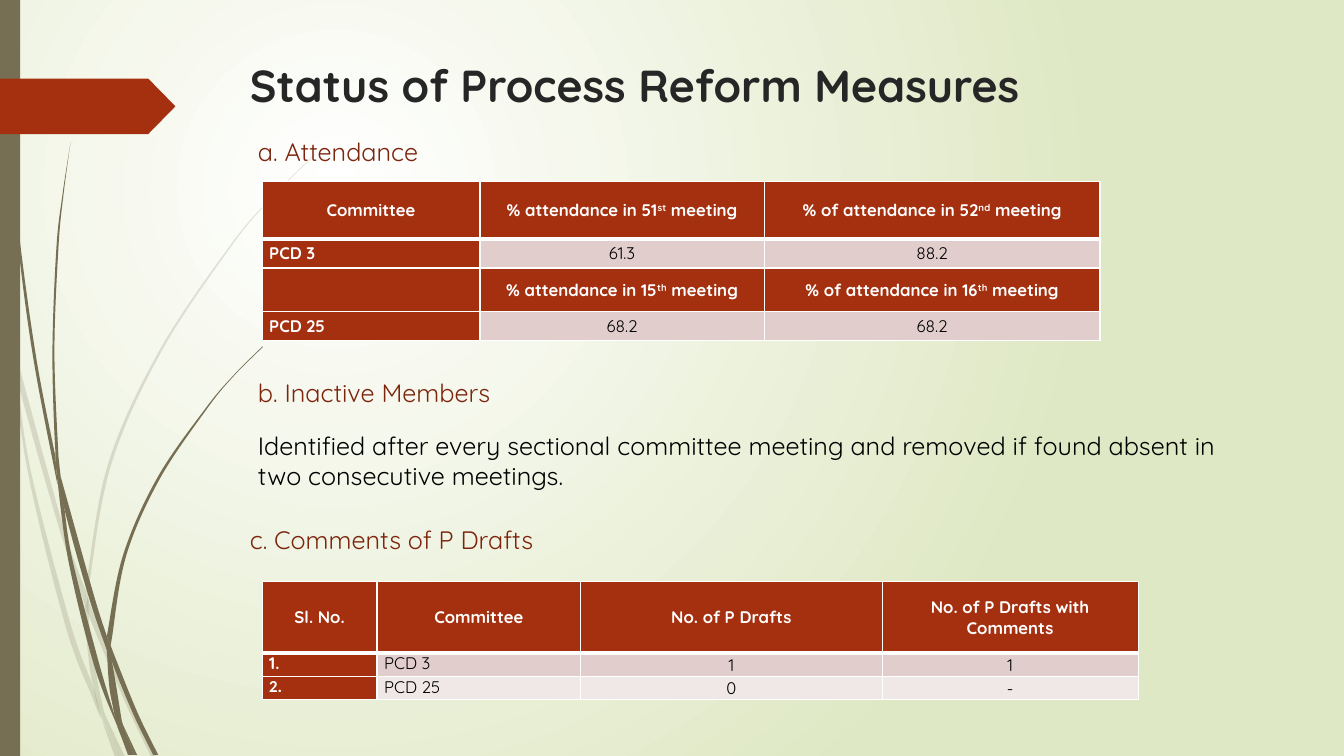
"""Build the slide on the status of process reform measures."""
from dataclasses import dataclass

from lxml import etree
from pptx import Presentation, util as u
from pptx.dml.color import RGBColor
from pptx.enum import shapes, text
from pptx.oxml import ns

SLIDE_W, SLIDE_H = 13.33, 7.5


@dataclass(frozen=True)
class Theme:
    font: str = "Quicksand"
    number_font: str = "Calibri"
    title: str = "262626"
    heading: str = "7C240C"
    ink: str = "000000"
    white: str = "FFFFFF"
    accent: str = "A53010"
    stem: str = "766F54"
    glow_edge: str = "DFE8C4"
    band: str = "E1CDCC"
    pale_band: str = "F0E8E7"
    title_size: int = 32
    body_size: int = 18
    cell_size: int = 12
    rule: int = 1
    header_rule: int = 3


THEME = Theme()

TITLE = ("Status of Process Reform Measures", (2.38, 0.52, 10.49, 1.4))
HEADINGS = [
    ("a. Attendance", (2.46, 1.3, 10.49, 0.4)),
    ("b. Inactive Members", (2.46, 3.69, 10.49, 0.4)),
    ("c. Comments of P Drafts", (2.38, 5.15, 10.49, 0.4)),
]
INACTIVE_RULE = (
    "Identified after every sectional committee meeting and removed "
    "if found absent in two consecutive meetings.", (2.46, 4.22, 10.13, 0.71))

ATTENDANCE = dict(
    left=2.6, top=1.8, cols=[2.16, 2.82, 3.33], rows=[0.57, 0.29, 0.43, 0.29],
    header_rows=(0, 2), label_cols=1, label_anchor=text.MSO_ANCHOR.MIDDLE,
    number_row=None, bands={1: THEME.band, 3: THEME.band},
    cells=[
        ["Committee", "% attendance in 51^st^ meeting", "% of attendance in 52^nd^ meeting"],
        ["PCD 3", "61.3", "88.2"],
        ["", "% attendance in 15^th^ meeting", "% of attendance in 16^th^ meeting"],
        ["PCD 25", "68.2", "68.2"],
    ])
DRAFTS = dict(
    left=2.6, top=5.77, cols=[1.14, 2.02, 2.99, 2.54], rows=[0.71, 0.23, 0.23],
    header_rows=(0,), label_cols=2, label_anchor=text.MSO_ANCHOR.TOP,
    number_row=2, bands={1: THEME.band, 2: THEME.pale_band},
    cells=[
        ["Sl. No.", "Committee", "No. of P Drafts", "No. of P Drafts with Comments"],
        ["1.", "PCD 3", "1", "1"],
        ["2.", "PCD 25", "0", "-"],
    ])

PALE_STEMS = [
    ([(.11, 3.5), (.09, 3.22), (0, 2.82)], [(0, 2.99), (.1, 3.44)]),
    ([(.14, 3.45), (.17, 3.76), (.58, 5.22), (.84, 5.99)], [(.85, 5.86), (.62, 5.2), (.14, 3.45)]),
    ([(.88, 5.96), (.88, 6.1), (1.23, 6.94), (1.5, 7.51)], [(1.55, 7.51), (1.27, 6.92), (.92, 6.07)]),
    ([(1.05, 7.11), (1.19, 7.51)], [(1.24, 7.51), (1.05, 7.11)]),
    ([(.11, 3.5), (.28, 4.7), (.65, 6.21), (.92, 6.93), (1.01, 7.14)],
     [(.99, 7.07), (.93, 6.83), (.7, 6.19), (.31, 4.69), (.17, 3.76)]),
    ([(.84, 5.99), (.87, 6.46), (.93, 6.83), (1.05, 7.11)], [(1.03, 7.06), (.91, 6.46), (.88, 6.1)]),
    ([(3.12, 1.53), (2.68, 1.97), (2.28, 2.44), (1.58, 3.48), (1.07, 4.61), (.85, 5.84)],
     [(.88, 5.96), (.88, 5.84), (1.1, 4.62), (1.6, 3.49), (2.29, 2.45), (2.68, 1.98), (3.12, 1.54)]),
    ([(1.01, 7.14), (1.14, 7.51)], [(1.19, 7.51), (1.01, 7.14)]),
    ([(.85, 5.86), (.84, 5.99), (.88, 6.1)], [(.88, 5.96), (.85, 5.86)]),
    ([(.93, 6.83), (.99, 7.07), (1.19, 7.51)], [(1.05, 7.11), (.96, 6.92)]),
]
DARK_STEMS = [
    ([(.03, 0), (.04, .48), (.07, 1.1), (.17, 2.33), (.33, 3.55), (.57, 4.81)],
     [(.55, 4.53), (.36, 3.55), (.19, 2.32), (.08, 1.09), (.05, .48), (.04, 0)]),
    ([(.6, 4.72), (.64, 5.05), (.88, 5.92), (1.06, 6.45)], [(1.06, 6.31), (.93, 5.9), (.6, 4.72)]),
    ([(1.1, 6.41), (1.11, 6.56), (1.32, 7.08), (1.52, 7.49)], [(1.57, 7.49), (1.36, 7.06), (1.13, 6.49)]),
    ([(.57, 4.77), (.68, 5.57), (.93, 6.59), (1.17, 7.22)],
     [(1.16, 7.17), (.98, 6.57), (.72, 5.56), (.64, 5.05)]),
    ([(.7, 1.41), (.62, 1.93), (.56, 2.45), (.52, 3.49), (.55, 4.49), (.6, 4.72)],
     [(.58, 4.53), (.54, 3.49), (.58, 2.45), (.63, 1.93), (.7, 1.41)]),
    ([(1.22, 7.19), (1.33, 7.49)], [(1.36, 7.49), (1.22, 7.19)]),
    ([(.55, 4.49), (.57, 4.77), (.64, 5.05)], [(.6, 4.72), (.55, 4.49)]),
    ([(2.6, 3.44), (2.31, 3.73), (2.04, 4.05), (1.56, 4.74), (1.22, 5.51), (1.06, 6.31)],
     [(1.1, 6.41), (1.11, 6.33), (1.25, 5.52), (1.58, 4.76), (2.05, 4.06), (2.31, 3.74), (2.61, 3.44)]),
    ([(1.17, 7.22), (1.27, 7.49)], [(1.31, 7.49), (1.17, 7.22)]),
    ([(1.06, 6.45), (1.1, 6.91), (1.22, 7.19)], [(1.21, 7.16), (1.11, 6.56), (1.06, 6.45)]),
    ([(1.06, 6.31), (1.06, 6.45), (1.11, 6.56)], [(1.1, 6.41), (1.06, 6.31)]),
    ([(1.1, 6.91), (1.17, 7.22), (1.3, 7.49)], [(1.33, 7.49), (1.22, 7.19), (1.16, 7.06)]),
]


def inches(box):
    return [u.Inches(length) for length in box]


def write(frame, words, size=THEME.body_size, color=THEME.ink, bold=False,
          font=THEME.font, align=text.PP_ALIGN.LEFT):
    """Write words into a frame; parts between carets are raised."""
    frame.word_wrap = True
    line = frame.paragraphs[0]
    line.alignment = align
    for index, part in enumerate(words.split("^")):
        run = line.add_run()
        run.text = part
        run.font.size, run.font.bold, run.font.name = u.Pt(size), bold, font
        run.font.color.rgb = RGBColor.from_string(color)
        if index % 2:
            run.font._element.set("baseline", "30000")


def paint(shape, color, opacity=100):
    shape.shadow.inherit = False
    shape.line.fill.background()
    shape.fill.solid()
    shape.fill.fore_color.rgb = RGBColor.from_string(color)
    if opacity < 100:
        tint = shape._element.spPr.find(".//" + ns.qn("a:srgbClr"))
        etree.SubElement(tint, ns.qn("a:alpha"), val=str(opacity * 1000))


def bend(segments, knots):
    """Turn straight segments into one smooth curve through the knots."""
    padded = [knots[0], *knots, knots[-1]]
    for segment, a, b, c, d in zip(segments, padded, padded[1:], padded[2:], padded[3:]):
        curve = etree.Element(ns.qn("a:cubicBezTo"))
        leave = [q + (r - p) / 6 for p, q, r in zip(a, b, c)]
        arrive = [q - (r - p) / 6 for p, q, r in zip(b, c, d)]
        for x, y in (leave, arrive, c):
            etree.SubElement(curve, ns.qn("a:pt"), x=str(round(x)), y=str(round(y)))
        segment.getparent().replace(segment, curve)


def draw_stem(slide, down, up, opacity):
    outline = [(x * 1000, y * 1000) for x, y in down + up]
    builder = slide.shapes.build_freeform(*outline[0], scale=u.Inches(1) / 1000)
    builder.add_line_segments(outline[1:], close=True)
    stem = builder.convert_to_shape()
    geometry = stem._element.spPr.find(ns.qn("a:custGeom"))
    knots = [(int(pt.get("x")), int(pt.get("y"))) for pt in geometry.iter(ns.qn("a:pt"))]
    segments = list(geometry.iter(ns.qn("a:lnTo")))
    turn = len(down)
    bend(segments[:turn - 1], knots[:turn])
    bend(segments[turn:], knots[turn:len(outline)])
    paint(stem, THEME.stem, opacity)


def draw_preset(slide, kind, box, color):
    shape = slide.shapes.add_shape(kind, *inches(box))
    paint(shape, color)
    return shape


def set_borders(cell, top, bottom):
    props = cell._tc.get_or_add_tcPr()
    widths = {"lnL": THEME.rule, "lnR": THEME.rule, "lnT": top, "lnB": bottom}
    for place, (side, width) in enumerate(widths.items()):
        border = etree.Element(ns.qn("a:" + side), w=str(u.Pt(width)))
        fill = etree.SubElement(border, ns.qn("a:solidFill"))
        etree.SubElement(fill, ns.qn("a:srgbClr"), val=THEME.white)
        props.insert(place, border)


def draw_table(slide, left, top, cols, rows, header_rows, label_cols, label_anchor,
               number_row, bands, cells):
    box = inches((left, top, sum(cols), sum(rows)))
    table = slide.shapes.add_table(len(rows), len(cols), *box).table
    for column, width in zip(table.columns, cols):
        column.width = u.Inches(width)
    for r, (height, entries) in enumerate(zip(rows, cells)):
        table.rows[r].height = u.Inches(height)
        for c, words in enumerate(entries):
            cell = table.cell(r, c)
            header = r in header_rows
            label = c < label_cols and not header
            strong = header or c == 0
            cell.margin_left = cell.margin_right = u.Inches(0.07)
            cell.margin_top = cell.margin_bottom = 0
            cell.vertical_anchor = label_anchor if label else text.MSO_ANCHOR.MIDDLE
            cell.fill.solid()
            cell.fill.fore_color.rgb = RGBColor.from_string(THEME.accent if strong else bands[r])
            set_borders(cell, THEME.header_rule if r == 1 else THEME.rule,
                        THEME.header_rule if r == 0 else THEME.rule)
            write(cell.text_frame, words, size=THEME.cell_size, bold=strong,
                  color=THEME.white if strong else THEME.ink,
                  font=THEME.number_font if (r, c) == (number_row, 0) else THEME.font,
                  align=text.PP_ALIGN.JUSTIFY if label else text.PP_ALIGN.CENTER)


def draw_background(slide):
    fill = slide.background.fill
    fill.gradient()
    for stop, color in zip(fill.gradient_stops, (THEME.white, THEME.glow_edge)):
        stop.color.rgb = RGBColor.from_string(color)
    gradient = slide._element.find(".//" + ns.qn("a:gradFill"))
    gradient.remove(gradient.find(ns.qn("a:lin")))
    glow = etree.SubElement(gradient, ns.qn("a:path"), {"path": "circle"})
    etree.SubElement(glow, ns.qn("a:fillToRect"), l="50000", t="50000", r="100000", b="100000")


def main():
    deck = Presentation()
    deck.slide_width, deck.slide_height = inches((SLIDE_W, SLIDE_H))
    slide = deck.slides.add_slide(deck.slide_layouts[6])
    draw_background(slide)
    for stems, opacity in ((PALE_STEMS, 20), (DARK_STEMS, 100)):
        for down, up in stems:
            draw_stem(slide, down, up, opacity)
    draw_preset(slide, shapes.MSO_SHAPE.RECTANGLE, (0, 0, 0.2, SLIDE_H), THEME.stem)
    tag = draw_preset(slide, shapes.MSO_SHAPE.PENTAGON, (0, 0.78, 1.74, 0.55), THEME.accent)
    tag.adjustments[0] = 0.49
    labels = [(*TITLE, dict(size=THEME.title_size, color=THEME.title, bold=True))]
    labels += [(*heading, dict(color=THEME.heading)) for heading in HEADINGS]
    labels.append((*INACTIVE_RULE, {}))
    for words, box, style in labels:
        write(slide.shapes.add_textbox(*inches(box)).text_frame, words, **style)
    for table in (ATTENDANCE, DRAFTS):
        draw_table(slide, **table)
    deck.save("out.pptx")


if __name__ == "__main__":
    main()
